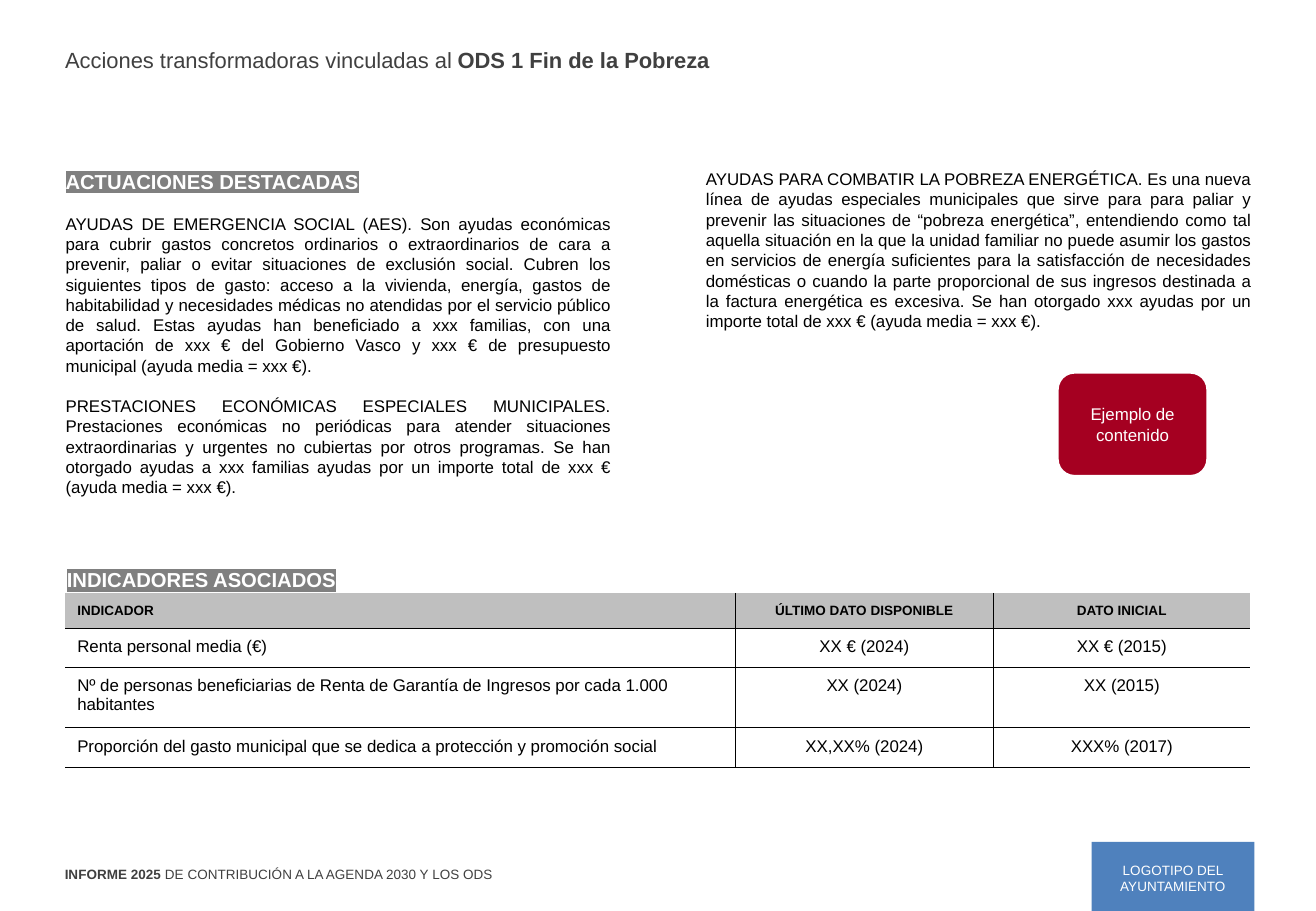
from dataclasses import dataclass

from lxml import etree
from pptx import Presentation
from pptx.dml.color import RGBColor
from pptx.enum.shapes import MSO_SHAPE
from pptx.enum.text import MSO_ANCHOR, MSO_AUTO_SIZE, PP_ALIGN
from pptx.oxml.ns import qn
from pptx.slide import Slide
from pptx.table import _Cell
from pptx.text.text import TextFrame, _Paragraph
from pptx.util import Pt

LEFT, CENTER, JUSTIFY = PP_ALIGN.LEFT, PP_ALIGN.CENTER, PP_ALIGN.JUSTIFY
TOP, MIDDLE = MSO_ANCHOR.TOP, MSO_ANCHOR.MIDDLE
RECTANGLE, ROUNDED = MSO_SHAPE.RECTANGLE, MSO_SHAPE.ROUNDED_RECTANGLE
NO_AUTOFIT = MSO_AUTO_SIZE.NONE
TITLE_ONLY = 5


@dataclass(frozen=True)
class Theme:
    font: str = "Arial"
    black: str = "000000"
    white: str = "FFFFFF"
    grey_text: str = "404040"
    highlight: str = "808080"
    header: str = "BFBFBF"
    blue: str = "4F81BD"
    red: str = "A50021"
    title_size: float = 13
    heading_size: float = 12
    body_size: float = 10
    small_size: float = 8
    rule: float = 0.25


THEME = Theme()


@dataclass(frozen=True)
class Span:
    text: str
    size: float = THEME.body_size
    color: str = THEME.black
    bold: bool = False
    highlight: str = ""


@dataclass(frozen=True)
class Para:
    spans: tuple[Span, ...]
    align: PP_ALIGN = LEFT
    before: float = 0


@dataclass(frozen=True)
class Box:
    left: float
    top: float
    width: float
    height: float

    def lengths(self) -> tuple[Pt, Pt, Pt, Pt]:
        return Pt(self.left), Pt(self.top), Pt(self.width), Pt(self.height)


@dataclass(frozen=True)
class Badge:
    box: Box
    preset: MSO_SHAPE
    fill: str
    label: Span
    outline: float = 0


def rgb(color: str) -> RGBColor:
    return RGBColor.from_string(color)


def heading(text: str) -> Para:
    return Para((Span(text, THEME.heading_size, THEME.white, True, THEME.highlight),), JUSTIFY)


def action(text: str, before: float = 0) -> Para:
    return Para((Span(text),), JUSTIFY, before)


def add_span(paragraph: _Paragraph, span: Span) -> None:
    run = paragraph.add_run()
    run.text = span.text
    run.font.name = THEME.font
    run.font.size = Pt(span.size)
    run.font.bold = span.bold
    run.font.color.rgb = rgb(span.color)
    if span.highlight:
        mark = etree.Element(qn("a:highlight"))
        etree.SubElement(mark, qn("a:srgbClr"), val=span.highlight)
        run._r.get_or_add_rPr().find(qn("a:solidFill")).addnext(mark)


def write(frame: TextFrame, paras: tuple[Para, ...], anchor: MSO_ANCHOR = TOP) -> None:
    frame.word_wrap = True
    frame.auto_size = NO_AUTOFIT
    frame.vertical_anchor = anchor
    for index, para in enumerate(paras):
        paragraph = frame.add_paragraph() if index else frame.paragraphs[0]
        paragraph.alignment = para.align
        paragraph.space_before = Pt(para.before)
        for span in para.spans:
            add_span(paragraph, span)


def clear_insets(frame: TextFrame) -> None:
    frame.margin_left = frame.margin_right = frame.margin_top = frame.margin_bottom = 0


def add_text(slide: Slide, box: Box, paras: tuple[Para, ...], columns: int = 1, gap: float = 0) -> None:
    text = slide.shapes.add_textbox(*box.lengths())
    clear_insets(text.text_frame)
    write(text.text_frame, paras)
    if columns > 1:
        body = text.element.txBody.bodyPr
        body.set("numCol", str(columns))
        body.set("spcCol", str(Pt(gap)))


def add_title(slide: Slide, box: Box, para: Para) -> None:
    title = slide.shapes.title
    title.left, title.top, title.width, title.height = box.lengths()
    clear_insets(title.text_frame)
    write(title.text_frame, (para,))


def add_badge(slide: Slide, badge: Badge) -> None:
    shape = slide.shapes.add_shape(badge.preset, *badge.box.lengths())
    shape.shadow.inherit = False
    shape.fill.solid()
    shape.fill.fore_color.rgb = rgb(badge.fill)
    if badge.outline:
        shape.line.color.rgb = rgb(THEME.white)
        shape.line.width = Pt(badge.outline)
    else:
        shape.line.fill.background()
    write(shape.text_frame, (Para((badge.label,), CENTER),), MIDDLE)


def set_borders(cell: _Cell, shown: dict[str, bool]) -> None:
    properties = cell._tc.get_or_add_tcPr()
    for index, (side, visible) in enumerate(shown.items()):
        line = etree.Element(qn(f"a:{side}"), w=str(Pt(THEME.rule)))
        if visible:
            fill = etree.SubElement(line, qn("a:solidFill"))
            etree.SubElement(fill, qn("a:srgbClr"), val=THEME.black)
        else:
            etree.SubElement(line, qn("a:noFill"))
        properties.insert(index, line)


def add_indicators(slide: Slide, box: Box, widths: tuple[float, ...], heights: tuple[float, ...],
                   rows: tuple[tuple[str, ...], ...]) -> None:
    table = slide.shapes.add_table(len(rows), len(widths), *box.lengths()).table
    table.first_row = table.horz_banding = False
    for column, width in zip(table.columns, widths):
        column.width = Pt(width)
    for r, (texts, height) in enumerate(zip(rows, heights)):
        table.rows[r].height = Pt(height)
        header = r == 0
        for c, text in enumerate(texts):
            cell = table.cell(r, c)
            cell.margin_left = cell.margin_right = Pt(7.2)
            cell.margin_top = cell.margin_bottom = Pt(5.7)
            cell.vertical_anchor = MIDDLE if header else TOP
            if header:
                cell.fill.solid()
                cell.fill.fore_color.rgb = rgb(THEME.header)
            else:
                cell.fill.background()
            set_borders(cell, {"lnL": c > 0, "lnR": c < len(widths) - 1, "lnT": not header, "lnB": True})
            paragraph = cell.text_frame.paragraphs[0]
            paragraph.alignment = CENTER if c else LEFT
            add_span(paragraph, Span(text, THEME.small_size if header else THEME.body_size, bold=header))


ACTIONS = (
    heading("ACTUACIONES DESTACADAS"),
    action("AYUDAS DE EMERGENCIA SOCIAL (AES). Son ayudas económicas para cubrir gastos concretos ordinarios o extraordinarios de cara a prevenir, paliar o evitar situaciones de exclusión social. Cubren los siguientes tipos de gasto: acceso a la vivienda, energía, gastos de habitabilidad y necesidades médicas no atendidas por el servicio público de salud. Estas ayudas han beneficiado a xxx familias, con una aportación de xxx € del Gobierno Vasco y xxx € de presupuesto municipal (ayuda media = xxx €).", 12),
    action("PRESTACIONES ECONÓMICAS ESPECIALES MUNICIPALES. Prestaciones económicas no periódicas para atender situaciones extraordinarias y urgentes no cubiertas por otros programas. Se han otorgado ayudas a xxx familias ayudas por un importe total de xxx € (ayuda media = xxx €).", 12),
    action("AYUDAS PARA COMBATIR LA POBREZA ENERGÉTICA. Es una nueva línea de ayudas especiales municipales que sirve para para paliar y prevenir las situaciones de “pobreza energética”, entendiendo como tal aquella situación en la que la unidad familiar no puede asumir los gastos en servicios de energía suficientes para la satisfacción de necesidades domésticas o cuando la parte proporcional de sus ingresos destinada a la factura energética es excesiva. Se han otorgado xxx ayudas por un importe total de xxx € (ayuda media = xxx €)."),
)
INDICATORS = (
    ("INDICADOR", "ÚLTIMO DATO DISPONIBLE", "DATO INICIAL"),
    ("Renta personal media (€)", "XX € (2024)", "XX € (2015)"),
    ("Nº de personas beneficiarias de Renta de Garantía de Ingresos por cada 1.000 habitantes", "XX (2024)", "XX (2015)"),
    ("Proporción del gasto municipal que se dedica a protección y promoción social", "XX,XX% (2024)", "XXX% (2017)"),
)
BADGES = (
    Badge(Box(647, 499, 96.5, 42.5), RECTANGLE, THEME.blue,
          Span("LOGOTIPO DEL AYUNTAMIENTO", THEME.small_size, THEME.white)),
    Badge(Box(626.5, 220.5, 89.5, 62), ROUNDED, THEME.red,
          Span("Ejemplo de contenido", color=THEME.white), 2),
)


def main() -> None:
    deck = Presentation()
    deck.slide_width, deck.slide_height = Pt(780), Pt(540)
    slide = deck.slides.add_slide(deck.slide_layouts[TITLE_ONLY])
    add_title(slide, Box(38.6, 27.4, 595.4, 16), Para((
        Span("Acciones transformadoras vinculadas al ", THEME.title_size, THEME.grey_text),
        Span("ODS 1 Fin de la Pobreza", THEME.title_size, THEME.grey_text, True))))
    add_text(slide, Box(38.9, 100.1, 702.3, 199.4), ACTIONS, 2, 56.7)
    add_text(slide, Box(39.6, 336.3, 320, 15), (heading("INDICADORES ASOCIADOS"),))
    add_indicators(slide, Box(38.6, 351.4, 702.6, 103.6), (397.4, 152.6, 152.6),
                   (20.7, 23.1, 36.1, 23.7), INDICATORS)
    for badge in BADGES:
        add_badge(slide, badge)
    add_text(slide, Box(38.4, 513.3, 390, 12), (Para((
        Span("INFORME 2025 ", THEME.small_size, THEME.grey_text, True),
        Span("DE CONTRIBUCIÓN A LA AGENDA 2030 Y LOS ODS", THEME.small_size, THEME.grey_text))),))
    deck.save("out.pptx")


if __name__ == "__main__":
    main()
